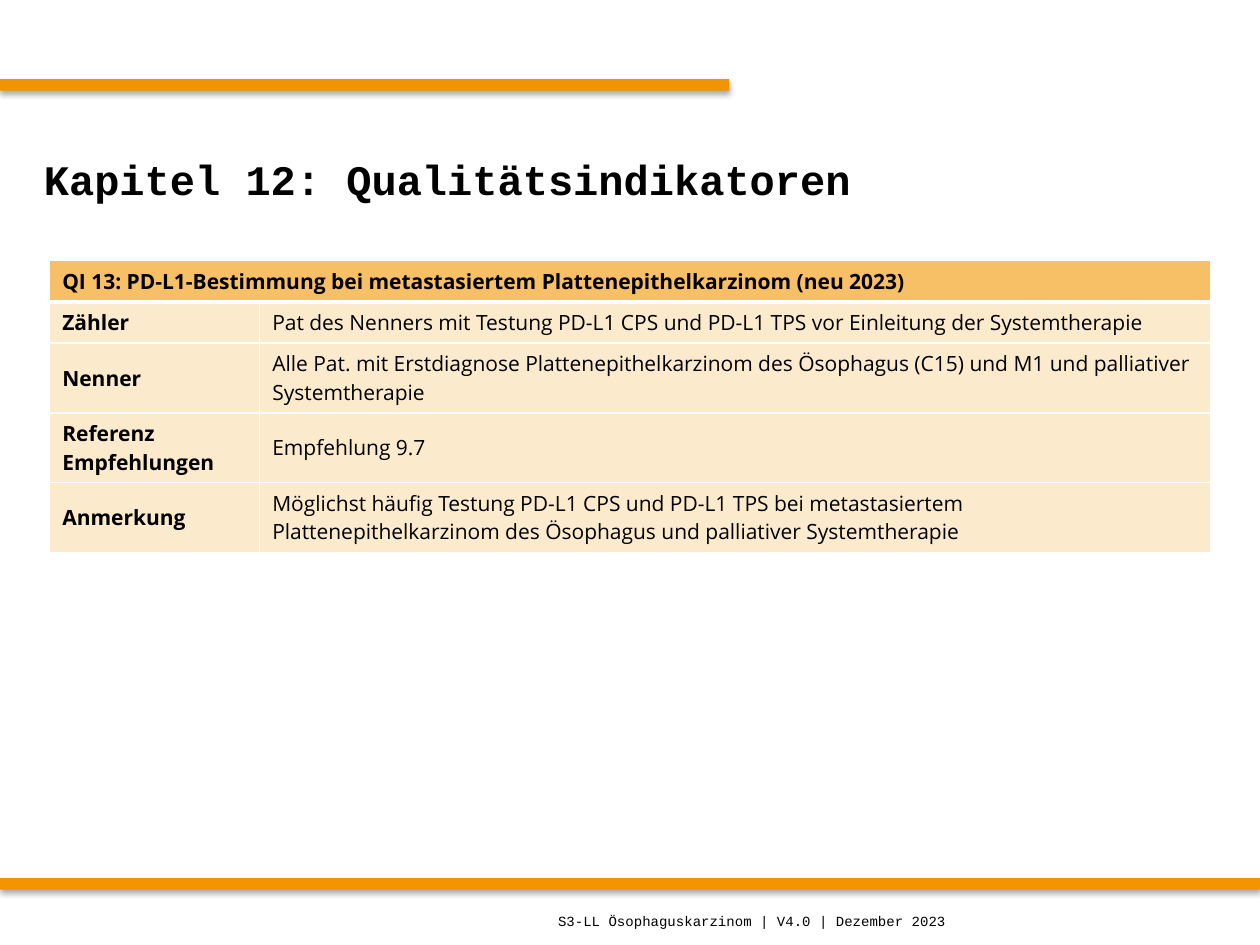
from lxml.etree import SubElement
from pptx import Presentation
from pptx.dml.color import RGBColor
from pptx.enum.shapes import MSO_SHAPE
from pptx.enum.text import MSO_ANCHOR
from pptx.oxml import parse_xml
from pptx.oxml.ns import nsdecls, qn
from pptx.util import Pt

ORANGE = RGBColor(0xF2, 0x94, 0x00)
HEADER = RGBColor(0xF7, 0xBF, 0x66)
CREAM = RGBColor(0xFC, 0xEA, 0xCC)
WHITE = RGBColor(0xFF, 0xFF, 0xFF)
BLACK = RGBColor(0x00, 0x00, 0x00)

SHADOW = (
    f'<a:effectLst {nsdecls("a")}><a:outerShdw blurRad="{Pt(3.1)}" dist="{Pt(1.8)}" '
    'dir="5400000" rotWithShape="0"><a:srgbClr val="000000"><a:alpha val="35000"/>'
    '</a:srgbClr></a:outerShdw></a:effectLst>'
)


def style_font(para, name, size, bold):
    para.font.name = name
    para.font.size = Pt(size)
    para.font.bold = bold
    para.font.color.rgb = BLACK


def style_cell(cell, fill, bold, top, bottom):
    props = cell._tc.get_or_add_tcPr()
    for side, width in (("lnL", 1), ("lnR", 1), ("lnT", top), ("lnB", bottom)):
        line = SubElement(props, qn(f"a:{side}"), w=str(Pt(width)))
        SubElement(SubElement(line, qn("a:solidFill")), qn("a:srgbClr"), val=str(WHITE))
    cell.fill.solid()
    cell.fill.fore_color.rgb = fill
    cell.vertical_anchor = MSO_ANCHOR.MIDDLE
    for para in cell.text_frame.paragraphs:
        style_font(para, "Open Sans", 12, bold)


deck = Presentation()
deck.slide_width, deck.slide_height = Pt(720), Pt(540)
page = deck.slides.add_slide(deck.slide_layouts[6])

for top, width in ((45.2, 416.6), (501.8, 720)):
    bar = page.shapes.add_shape(MSO_SHAPE.RECTANGLE, Pt(0), Pt(top), Pt(width), Pt(6.7))
    bar.fill.solid()
    bar.fill.fore_color.rgb = ORANGE
    bar.line.fill.background()
    bar.shadow.inherit = False
    properties = bar._element.spPr
    properties.replace(properties.find(qn("a:effectLst")), parse_xml(SHADOW))

for text, left, top, width, height, size, bold in (
    ("Kapitel 12: Qualitätsindikatoren", 18, 60, 684, 84, 24, True),
    ("S3-LL Ösophaguskarzinom | V4.0 | Dezember 2023", 311.8, 512, 396.7, 28, 8, False),
):
    box = page.shapes.add_textbox(Pt(left), Pt(top), Pt(width), Pt(height))
    frame = box.text_frame
    frame.word_wrap = True
    frame.vertical_anchor = MSO_ANCHOR.MIDDLE
    frame.text = text
    style_font(frame.paragraphs[0], "Courier New", size, bold)

rows = [
    ("QI 13: PD-L1-Bestimmung bei metastasiertem Plattenepithelkarzinom (neu 2023)", "", 23.5),
    ("Zähler",
     "Pat des Nenners mit Testung PD-L1 CPS und PD-L1 TPS vor Einleitung der Systemtherapie", 23.5),
    ("Nenner",
     "Alle Pat. mit Erstdiagnose Plattenepithelkarzinom des Ösophagus (C15) und M1 und "
     "palliativer Systemtherapie", 39.9),
    ("Referenz\vEmpfehlungen", "Empfehlung 9.7", 39.9),
    ("Anmerkung",
     "Möglichst häufig Testung PD-L1 CPS und PD-L1 TPS bei metastasiertem "
     "Plattenepithelkarzinom des Ösophagus und palliativer Systemtherapie", 39.9),
]
table = page.shapes.add_table(
    len(rows), 2, Pt(28.4), Pt(149), Pt(663.3), Pt(sum(row[2] for row in rows))
).table
table.columns[0].width, table.columns[1].width = Pt(120), Pt(543.3)
table.cell(0, 0).merge(table.cell(0, 1))

for index, (label, content, height) in enumerate(rows):
    table.rows[index].height = Pt(height)
    for column, text in enumerate((label, content)):
        cell = table.cell(index, column)
        cell.text = text
        style_cell(
            cell,
            fill=HEADER if index == 0 else CREAM,
            bold=column == 0,
            top=3 if index == 1 else 1,
            bottom=3 if index == 0 else 1,
        )
table.cell(len(rows) - 1, 1).text_frame.paragraphs[0].space_after = Pt(6)

deck.save("out.pptx")
